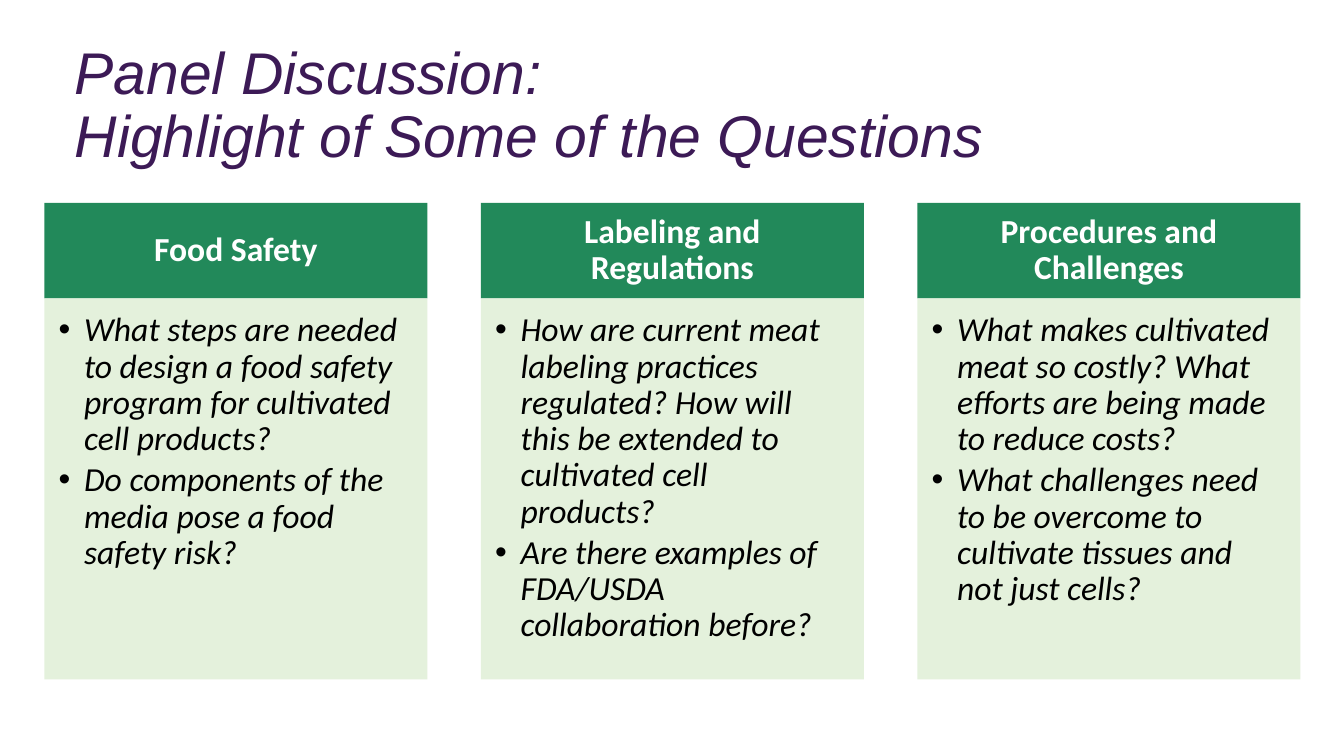
from dataclasses import dataclass
from typing import NamedTuple

from lxml import etree
from pptx import Presentation
from pptx.dml.color import RGBColor
from pptx.enum.shapes import MSO_SHAPE
from pptx.enum.text import MSO_ANCHOR, PP_ALIGN
from pptx.oxml.ns import qn
from pptx.util import Cm, Pt

RECT = MSO_SHAPE.RECTANGLE
TOP, MIDDLE = MSO_ANCHOR.TOP, MSO_ANCHOR.MIDDLE
LEFT, CENTER = PP_ALIGN.LEFT, PP_ALIGN.CENTER


@dataclass(frozen=True)
class Theme:
    plum: RGBColor = RGBColor(0x3C, 0x1A, 0x56)
    green: RGBColor = RGBColor(0x22, 0x89, 0x5A)
    pale: RGBColor = RGBColor(0xE2, 0xF0, 0xD9)
    white: RGBColor = RGBColor(0xFF, 0xFF, 0xFF)
    black: RGBColor = RGBColor(0, 0, 0)
    title: Pt = Pt(42)
    text: Pt = Pt(24)


class Box(NamedTuple):
    left: float
    top: float
    width: float
    height: float

    def size(self) -> list:
        return [Cm(side) for side in self]


class Style(NamedTuple):
    font: dict
    color: RGBColor
    frame: dict
    para: dict


class Topic(NamedTuple):
    head: str
    asks: list[str]


THEME = Theme()
TITLE = Style(
    {"name": "Arial", "size": THEME.title, "italic": True}, THEME.plum,
    {"vertical_anchor": MIDDLE},
    {"alignment": LEFT, "line_spacing": 0.9},
)
HEAD = Style(
    {"name": "Calibri", "size": THEME.text, "bold": True}, THEME.white,
    {"vertical_anchor": MIDDLE, "margin_left": Cm(0.48), "margin_right": Cm(0.48),
     "margin_top": Cm(0.27), "margin_bottom": Cm(0.27)},
    {"alignment": CENTER, "line_spacing": 0.9},
)
BODY = Style(
    {"name": "Calibri", "size": THEME.text, "italic": True}, THEME.black,
    {"vertical_anchor": TOP, "margin_left": Cm(0.36), "margin_right": Cm(0.48),
     "margin_top": Cm(0.36), "margin_bottom": Cm(0.53)},
    {"alignment": LEFT, "line_spacing": 0.9, "space_after": Pt(3.6)},
)

# Column grid, in centimetres
START, STEP, WIDTH = 1.12, 11, 9.65
HEAD_TOP, HEAD_TALL, BODY_TALL = 5.11, 2.41, 9.6

TOPICS = [
    Topic("Food Safety", [
        "What steps are needed to design a food safety program for cultivated cell products?",
        "Do components of the media pose a food safety risk?",
    ]),
    Topic("Labeling and Regulations", [
        "How are current meat labeling practices regulated? "
        "How will this be extended to cultivated cell products?",
        "Are there examples of FDA/USDA collaboration before?",
    ]),
    Topic("Procedures and Challenges", [
        "What makes cultivated meat so costly? What efforts are being made to reduce costs?",
        "What challenges need to be overcome to cultivate tissues and not just cells?",
    ]),
]


def apply(target, values: dict) -> None:
    for name, value in values.items():
        setattr(target, name, value)


def write(shape, lines: list[str], style: Style) -> None:
    frame = shape.text_frame
    frame.word_wrap = True
    apply(frame, style.frame)
    frame.text = "\n".join(lines)
    for para in frame.paragraphs:
        apply(para, style.para)
        for run in para.runs:
            apply(run.font, style.font)
            run.font.color.rgb = style.color


def panel(slide, box: Box, fill: RGBColor):
    shape = slide.shapes.add_shape(RECT, *box.size())
    shape.shadow.inherit = False
    shape.fill.solid()
    shape.fill.fore_color.rgb = fill
    shape.line.fill.background()
    return shape


def fade(shape, percent: int) -> None:
    color = shape.fill._xPr.find(qn("a:solidFill"))[0]
    etree.SubElement(color, qn("a:alpha"), val=str(percent * 1000))


def bullet(para) -> None:
    props = para._p.get_or_add_pPr()
    props.set("marL", str(Cm(0.64)))
    props.set("indent", str(-Cm(0.64)))
    etree.SubElement(props, qn("a:buFont"), typeface="Arial")
    etree.SubElement(props, qn("a:buChar"), char="•")


def column(slide, left: float, topic: Topic) -> None:
    head = panel(slide, Box(left, HEAD_TOP, WIDTH, HEAD_TALL), THEME.green)
    write(head, [topic.head], HEAD)
    body = panel(slide, Box(left, HEAD_TOP + HEAD_TALL, WIDTH, BODY_TALL), THEME.pale)
    fade(body, 90)
    write(body, topic.asks, BODY)
    for para in body.text_frame.paragraphs:
        bullet(para)


def main() -> None:
    deck = Presentation()
    deck.slide_width, deck.slide_height = Cm(33.87), Cm(19.05)
    slide = deck.slides.add_slide(deck.slide_layouts[6])

    # Title on two lines
    title = slide.shapes.add_textbox(*Box(1.63, 0.86, 31.7, 3.68).size())
    write(title, ["Panel Discussion:", "Highlight of Some of the Questions"], TITLE)

    # One column per topic
    for place, topic in enumerate(TOPICS):
        column(slide, START + place * STEP, topic)

    deck.save("out.pptx")


if __name__ == "__main__":
    main()
